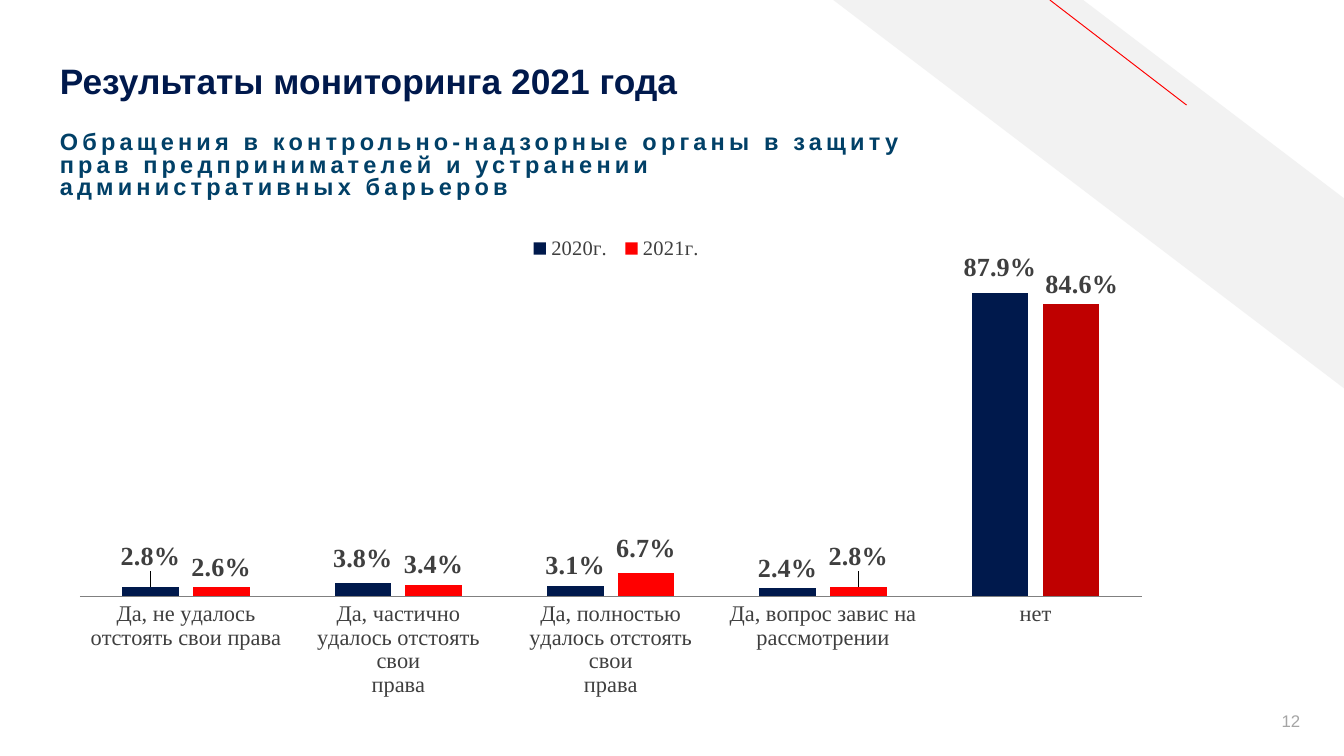
import lxml.etree
import pptx
import pptx.chart.data
import pptx.dml.color
import pptx.enum.chart
import pptx.enum.shapes
import pptx.enum.text
import pptx.oxml
import pptx.oxml.ns
import pptx.util

WIDTH = 10
HEIGHT = WIDTH * 9 / 16
qn = pptx.oxml.ns.qn


class Theme:
    navy, teal, red, dark_red = "00194C", "014067", "FF0000", "BF0000"
    stripe, text, axis, muted = "F2F2F2", "3F3F3F", "808080", "A5A5A5"
    sans, serif = "Arial", "Times New Roman"
    title, subtitle, number = 18.9, 12.6, 9
    label, category, legend = 14, 12, 11


CATEGORIES = [
    "Да, не удалось отстоять свои права",
    "Да, частично удалось отстоять свои\nправа",
    "Да, полностью удалось отстоять свои\nправа",
    "Да, вопрос завис на рассмотрении",
    "нет",
]
# Each year: values, bar colour, label shifts as shares of the chart
YEARS = {
    "2020г.": ([0.028, 0.038, 0.031, 0.024, 0.879], Theme.navy,
               {0: (0, -0.02), 1: (0, -0.01), 4: (0, -0.01)}),
    "2021г.": ([0.026, 0.034, 0.067, 0.028, 0.846], Theme.red,
               {2: (0, -0.01), 3: (0, -0.02), 4: (0.01, 0)}),
}
# Chart extension that hides the lines from bars to moved labels
NO_LEADER_LINES = (
    '<c:extLst xmlns:c="http://schemas.openxmlformats.org/drawingml/2006/chart">'
    '<c:ext uri="{CE6537A1-D6FC-4f65-9D91-7224C49458BB}" '
    'xmlns:c15="http://schemas.microsoft.com/office/drawing/2012/chart">'
    '<c15:showLeaderLines val="0"/></c:ext></c:extLst>')


def box(left, top, width, height):
    """Turn shares of the slide into lengths."""
    return [pptx.util.Inches(share * side) for share, side in
            zip((left, top, width, height), (WIDTH, HEIGHT) * 2)]


def rgb(value):
    return pptx.dml.color.RGBColor.from_string(value)


def style(font, size, color, name=Theme.sans, bold=False):
    font.size, font.name, font.bold = pptx.util.Pt(size), name, bold
    font.color.rgb = rgb(color)


def manual_layout(**parts):
    """Make a chart layout from modes and shares of the chart."""
    layout = lxml.etree.Element(qn("c:layout"))
    manual = lxml.etree.SubElement(layout, qn("c:manualLayout"))
    for tag, value in parts.items():
        lxml.etree.SubElement(manual, qn(f"c:{tag}")).set("val", str(value))
    return layout


def text_frame(slide, area, anchor, bottom):
    frame = slide.shapes.add_textbox(*area).text_frame
    frame.word_wrap = True
    frame.vertical_anchor = anchor
    frame.margin_left = frame.margin_right = pptx.util.Pt(5.4)
    frame.margin_top = pptx.util.Inches(0.04)
    frame.margin_bottom = pptx.util.Inches(bottom)
    return frame


def add_corner(slide, area):
    # Pale stripe
    left, top, width, height = area
    stripe = slide.shapes.add_shape(
        pptx.enum.shapes.MSO_SHAPE.DIAGONAL_STRIPE, *area)
    stripe.adjustments[0] = 0.512
    stripe.element.spPr.xfrm.set("flipH", "1")
    stripe.shadow.inherit = False
    stripe.fill.solid()
    stripe.fill.fore_color.rgb = rgb(Theme.stripe)
    stripe.line.fill.background()

    # Red accent along the stripe
    accent = slide.shapes.add_connector(
        pptx.enum.shapes.MSO_CONNECTOR.STRAIGHT,
        left + int(width * 0.69), top + int(height * 0.27),
        left + int(width * 0.423), top)
    accent.line.color.rgb = rgb(Theme.red)
    accent.line.width = pptx.util.Pt(0.5)
    lxml.etree.SubElement(accent.element.spPr, qn("a:effectLst"))


def add_heading(slide, area, title_text, subtitle_text):
    frame = text_frame(slide, area, pptx.enum.text.MSO_ANCHOR.BOTTOM, 0)
    title, subtitle = frame.paragraphs[0], frame.add_paragraph()
    title.text = title_text
    style(title.font, Theme.title, Theme.navy, bold=True)
    subtitle.text = subtitle_text
    style(subtitle.font, Theme.subtitle, Theme.teal, bold=True)
    subtitle.space_before = pptx.util.Pt(17)
    subtitle.runs[0].font._element.set("spc", "225")
    title.line_spacing = subtitle.line_spacing = 0.8


def add_number(slide, area, number):
    frame = text_frame(slide, area, pptx.enum.text.MSO_ANCHOR.MIDDLE, 0.04)
    paragraph = frame.paragraphs[0]
    paragraph.text = number
    paragraph.alignment = pptx.enum.text.PP_ALIGN.RIGHT
    style(paragraph.font, Theme.number, Theme.muted)


def style_year(year, color, shifts):
    outside = pptx.enum.chart.XL_LABEL_POSITION.OUTSIDE_END
    year.format.fill.solid()
    year.format.fill.fore_color.rgb = rgb(color)
    year.invert_if_negative = False
    labels = year.data_labels
    labels.show_value = True
    labels.number_format, labels.number_format_is_linked = "0.0%", False
    labels.position = outside
    style(labels.font, Theme.label, Theme.text, Theme.serif, True)

    # Labels moved off their usual place
    for index, (x, y) in shifts.items():
        label = year.points[index].data_label
        style(label.font, Theme.label, Theme.text, Theme.serif, True)
        label.position = outside
        entry = labels._element.xpath(f"c:dLbl[c:idx/@val='{index}']")[0]
        entry.insert(1, manual_layout(x=x, y=y))
    labels._element.append(pptx.oxml.parse_xml(NO_LEADER_LINES))


def add_answers_chart(slide, area):
    data = pptx.chart.data.CategoryChartData(number_format="0.0%")
    data.categories = CATEGORIES
    for name, (values, _, _) in YEARS.items():
        data.add_series(name, values)
    chart = slide.shapes.add_chart(
        pptx.enum.chart.XL_CHART_TYPE.COLUMN_CLUSTERED, *area, data).chart
    style(chart.font, 10, Theme.text)
    chart.has_title = False

    # Bars and their labels
    plot = chart.plots[0]
    plot.gap_width, plot.overlap = 150, -25
    plot.vary_by_categories = False
    for year in plot.series:
        _, color, shifts = YEARS[year.name]
        style_year(year, color, shifts)
    refusals = plot.series[1].points[4].format.fill
    refusals.solid()
    refusals.fore_color.rgb = rgb(Theme.dark_red)

    # Axes
    answers, shares = chart.category_axis, chart.value_axis
    answers.major_tick_mark = pptx.enum.chart.XL_TICK_MARK.NONE
    answers.format.line.color.rgb = rgb(Theme.axis)
    answers.format.line.width = pptx.util.Pt(0.75)
    style(answers.tick_labels.font, Theme.category, Theme.text, Theme.serif)
    shares.minimum_scale, shares.maximum_scale = 0, 1
    shares.has_major_gridlines = False
    shares.tick_labels.number_format = "0.0%"
    shares.tick_labels.number_format_is_linked = False
    shares.visible = False

    # Legend and plot placement
    chart.has_legend = True
    legend = chart.legend
    legend.position = pptx.enum.chart.XL_LEGEND_POSITION.TOP
    legend.include_in_layout = False
    style(legend.font, Theme.legend, Theme.text, Theme.serif)
    legend._element.find(qn("c:legendPos")).addnext(manual_layout(
        xMode="edge", yMode="edge", x=0.42, y=0.06, w=0.17, h=0.07))
    plot_area = chart._chartSpace.chart.plotArea
    for layout in plot_area.findall(qn("c:layout")):
        plot_area.remove(layout)
    plot_area.insert(0, manual_layout(
        layoutTarget="inner", xMode="edge", yMode="edge",
        x=0.02, y=0.1, w=0.96, h=0.68))


def main():
    deck = pptx.Presentation()
    deck.slide_width = pptx.util.Inches(WIDTH)
    deck.slide_height = pptx.util.Inches(HEIGHT)
    slide = deck.slides.add_slide(deck.slide_layouts[6])
    add_corner(slide, box(0.62, 0, 0.381, 0.515))
    add_number(slide, box(0.914, 0.927, 0.061, 0.053), "12")
    add_heading(
        slide, box(0.037, 0.066, 0.678, 0.199),
        "Результаты мониторинга 2021 года",
        "Обращения в контрольно-надзорные органы в защиту прав "
        "предпринимателей и устранении административных барьеров")
    add_answers_chart(slide, box(0.043, 0.265, 0.823, 0.672))
    deck.save("out.pptx")


if __name__ == "__main__":
    main()
